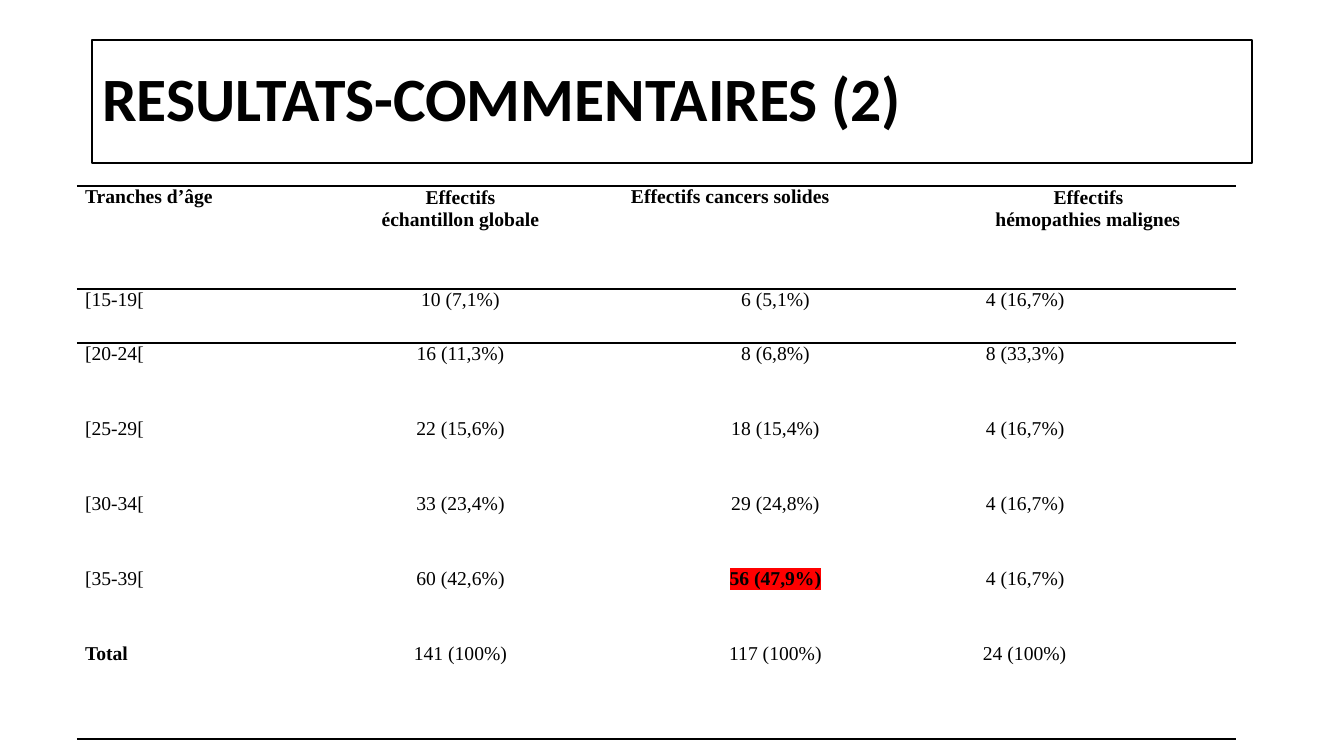
"""Build the age-group results slide with its title and table."""
from lxml import etree
from pptx import Presentation, util as u
from pptx.dml.color import RGBColor
from pptx.enum import text
from pptx.oxml.ns import qn

BLACK = RGBColor(0, 0, 0)
WHITE = RGBColor(255, 255, 255)
RED = RGBColor(255, 0, 0)
SCALE = 914400 / 100.8
PLAIN = "{2D5ABB26-0587-4C30-8999-92F81FD0307C}"
SERIF = "Times New Roman"

COLS = [230, 294, 345, 290]
ROWS = [103, 54, 75, 75, 75, 75, 96]
DATA = [
    ["Tranches d’âge", "Effectifs\néchantillon globale",
     "Effectifs cancers solides", "Effectifs\nhémopathies malignes"],
    ["[15-19[", "10 (7,1%)", "6 (5,1%)", "4 (16,7%)"],
    ["[20-24[", "16 (11,3%)", "8 (6,8%)", "8 (33,3%)"],
    ["[25-29[", "22 (15,6%)", "18 (15,4%)", "4 (16,7%)"],
    ["[30-34[", "33 (23,4%)", "29 (24,8%)", "4 (16,7%)"],
    ["[35-39[", "60 (42,6%)", "56 (47,9%)", "4 (16,7%)"],
    ["Total", "141 (100%)", "117 (100%)", "24 (100%)"],
]
LAST = len(DATA) - 1
HOT = (5, 2)
BOLD = {HOT, (LAST, 0)}
LEFT, MID = text.PP_ALIGN.LEFT, text.PP_ALIGN.CENTER
BODY = [(LEFT, 8, 0, 0), (MID, 41, 28, 0), (MID, 50, 46, 0), (LEFT, 40, 0, 0)]
HEAD = [(LEFT, 8, 0, 0), (MID, 41, 28, 0), (LEFT, 71, 0, -41), (MID, 43, 48, 0)]


def px(n):
    """Turn pixels into EMU."""
    return u.Emu(round(n * SCALE))


def style(run, face, size, bold):
    """Set the font of a run."""
    font = run.font
    font.name, font.size, font.bold = face, u.Pt(size), bold
    font.color.rgb = BLACK


def mark(run, color):
    """Highlight a run."""
    fill = run.font._element.find(qn("a:solidFill"))
    light = etree.Element(qn("a:highlight"))
    etree.SubElement(light, qn("a:srgbClr"), val=str(color))
    fill.addnext(light)


def rule(cell, side, width):
    """Draw a black border on the top or bottom of a cell."""
    line = etree.Element(qn("a:ln" + side), w=str(u.Pt(width)))
    fill = etree.SubElement(line, qn("a:solidFill"))
    etree.SubElement(fill, qn("a:srgbClr"), val=str(BLACK))
    props = cell._tc.get_or_add_tcPr()
    props.insert(len(props) - 1, line)


def indent(para, align, left, right, first):
    """Set alignment and indents of a paragraph."""
    para.alignment = align
    props = para._p.get_or_add_pPr()
    for key, n in (("marL", left), ("marR", right), ("indent", first)):
        props.set(key, str(px(n)))


def space(para, row, col, nth):
    """Set the spacing of a paragraph by its row."""
    if row == 0 and col in (1, 3):
        para.line_spacing = u.Pt(16.1 if nth else 15.9)
    elif row == 1:
        para.line_spacing = u.Pt(15.8)
    elif row > 1:
        para.space_before = u.Pt(9.4 if (row, col) == (LAST, 0) else 9.2)


def write(cell, row, col):
    """Fill one table cell."""
    cell.fill.background()
    cell.margin_left = cell.margin_right = 0
    cell.margin_top = cell.margin_bottom = 0
    cell.text_frame.text = DATA[row][col]
    for nth, para in enumerate(cell.text_frame.paragraphs):
        align, left, right, first = (BODY if row else HEAD)[col]
        if row == 0 and col == 3 and nth:
            left, right = 26, 32
        if row == LAST and col == 3:
            left = 37
        indent(para, align, left, right, first)
        space(para, row, col, nth)
        for run in para.runs:
            style(run, SERIF, 14, row == 0 or (row, col) in BOLD)
            if (row, col) == HOT:
                mark(run, RED)
    if row < 2:
        rule(cell, "T", 1 if row else 1.5)
    if row in (0, LAST):
        rule(cell, "B", 1.5 if row else 1)


def add_grid(slide):
    """Add the table of age groups."""
    frame = slide.shapes.add_table(
        len(ROWS), len(COLS), px(77), px(186), px(sum(COLS)), px(sum(ROWS)))
    grid = frame.table
    grid.first_row = grid.horz_banding = False
    grid._tbl.tblPr.find(qn("a:tableStyleId")).text = PLAIN
    for col, width in enumerate(COLS):
        grid.columns[col].width = px(width)
    for row, height in enumerate(ROWS):
        grid.rows[row].height = px(height)
        for col in range(len(COLS)):
            write(grid.cell(row, col), row, col)


def add_title(slide, words):
    """Format the title placeholder as a framed box."""
    box = slide.shapes.title
    box.left, box.top, box.width, box.height = map(px, (92, 40, 1160, 123))
    box.fill.solid()
    box.fill.fore_color.rgb = WHITE
    box.line.color.rgb = BLACK
    box.line.width = u.Pt(1)
    frame = box.text_frame
    frame.text = words
    frame.word_wrap = True
    frame.auto_size = text.MSO_AUTO_SIZE.NONE
    frame.vertical_anchor = text.MSO_ANCHOR.MIDDLE
    para = frame.paragraphs[0]
    para.alignment = LEFT
    para.line_spacing = 0.9
    style(para.runs[0], "Calibri", 44, True)


def main():
    """Build and save the slide."""
    deck = Presentation()
    deck.slide_width, deck.slide_height = px(1344), px(756)
    slide = deck.slides.add_slide(deck.slide_layouts[5])
    add_title(slide, "RESULTATS-COMMENTAIRES (2)")
    add_grid(slide)
    deck.save("out.pptx")


if __name__ == "__main__":
    main()
